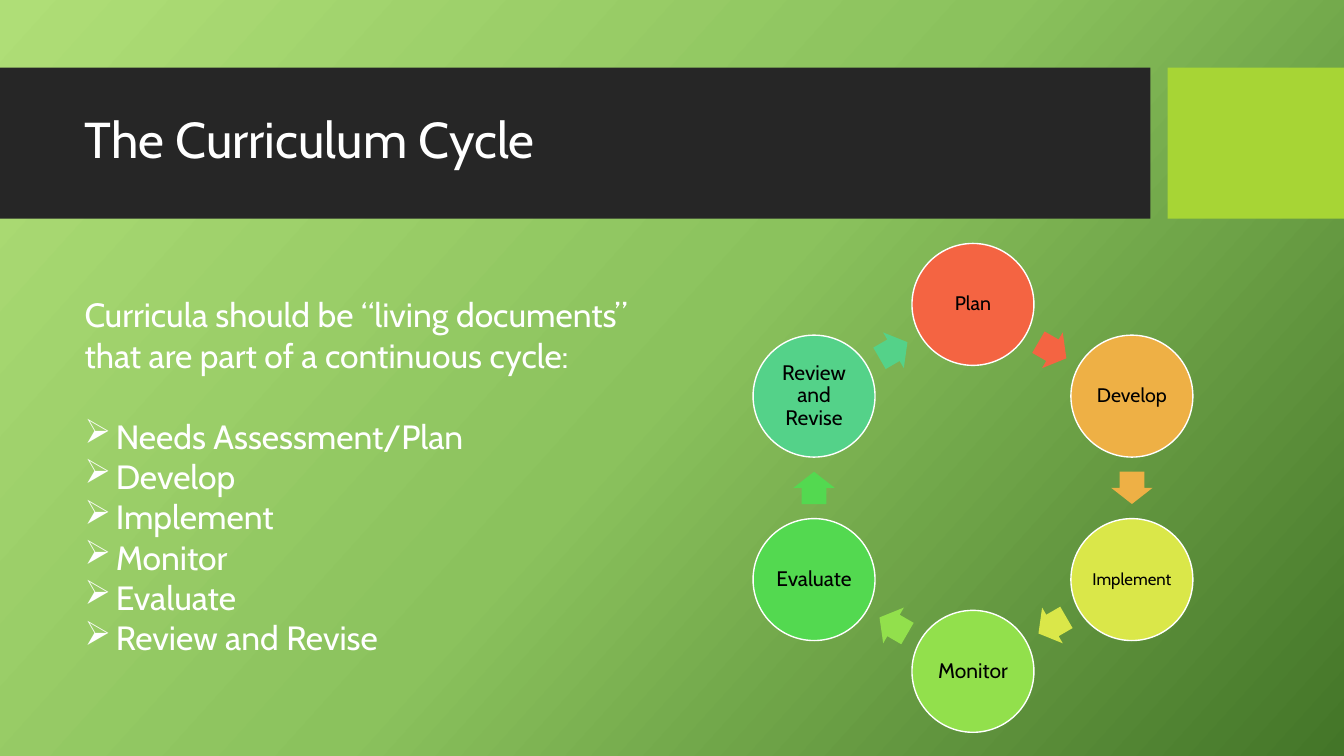
import copy
import math

import lxml.etree
import pptx
import pptx.dml.color
import pptx.enum.shapes
import pptx.enum.text
import pptx.oxml.ns
import pptx.util

Inches = pptx.util.Inches
Pt = pptx.util.Pt
SHAPE = pptx.enum.shapes.MSO_SHAPE
ALIGN = pptx.enum.text.PP_ALIGN
MIDDLE = pptx.enum.text.MSO_ANCHOR.MIDDLE

COLORS = {
    "white": "FFFFFF", "black": "000000",
    "band": "262626", "accent": "A7D535",
    "back_light": "AFDE77", "back_mid": "8BC25D", "back_dark": "437528",
    "plan": "F46442", "develop": "EEB045", "implement": "DAE749",
    "monitor": "92E04C", "evaluate": "53D950", "review": "54D289",
}

INTRO = ["Curricula should be “living documents”",
         "that are part of a continuous cycle:"]
STEPS = ["Needs Assessment/Plan", "Develop", "Implement",
         "Monitor", "Evaluate", "Review and Revise"]
# Label, colour, text size; clockwise from the top
STAGES = [("Plan", "plan", 14), ("Develop", "develop", 14),
          ("Implement", "implement", 12), ("Monitor", "monitor", 15),
          ("Evaluate", "evaluate", 15), ("Review and Revise", "review", 15)]


class CycleSlide:
    font = "Cabin"

    def __init__(self, deck):
        self.slide = deck.slides.add_slide(deck.slide_layouts[5])
        self.shapes = self.slide.shapes

    def color(self, name):
        return pptx.dml.color.RGBColor.from_string(COLORS[name])

    def background(self, names, angle):
        fill = self.slide.background.fill
        fill.gradient()
        fill.gradient_angle = 360 - angle
        stop_list = self.slide.element.xpath(".//a:gsLst")[0]
        stop_list.append(copy.deepcopy(stop_list[-1]))
        for i, (stop, name) in enumerate(zip(fill.gradient_stops, names)):
            stop.position = i / (len(names) - 1)
            stop.color.rgb = self.color(name)

    def style(self, paragraph, size, color):
        for run in paragraph.runs:
            run.font.name = self.font
            run.font.size = Pt(size)
            run.font.color.rgb = self.color(color)

    def shape(self, kind, left, top, width, height, fill):
        shape = self.shapes.add_shape(kind, Inches(left), Inches(top),
                                      Inches(width), Inches(height))
        shape.shadow.inherit = False
        shape.fill.solid()
        shape.fill.fore_color.rgb = self.color(fill)
        shape.line.fill.background()
        return shape

    def band(self, left, width, fill):
        band = self.shape(SHAPE.RECTANGLE, left, 0.67, width, 1.5, fill)
        self.shapes.title.element.addprevious(band.element)

    def title(self, text):
        title = self.shapes.title
        title.left, title.top = Inches(0.74), Inches(0.82)
        title.width, title.height = Inches(10.51), Inches(1.18)
        title.text_frame.text = text
        title.text_frame.vertical_anchor = MIDDLE
        heading = title.text_frame.paragraphs[0]
        heading.alignment = ALIGN.LEFT
        heading.line_spacing = 0.9
        self.style(heading, 36, "white")

    def bullet(self, paragraph, indent):
        props = paragraph._p.get_or_add_pPr()
        props.set("marL", str(Inches(indent)))
        props.set("indent", str(-Inches(indent)))
        mark = lxml.etree.SubElement(props, pptx.oxml.ns.qn("a:buChar"))
        mark.set("char", "➢")

    def body(self, intro, steps):
        box = self.shapes.add_textbox(Inches(0.74), Inches(2.87),
                                      Inches(6.67), Inches(3.74))
        frame = box.text_frame
        frame.word_wrap = True
        frame.text = "\n".join(intro + steps)
        first_step = len(intro)
        for paragraph in frame.paragraphs[first_step:]:
            self.bullet(paragraph, 0.31)
        frame.paragraphs[first_step].space_before = Pt(29)
        for paragraph in frame.paragraphs:
            self.style(paragraph, 24, "white")

    def stage(self, x, y, diameter, label, fill, size):
        circle = self.shape(SHAPE.OVAL, x - diameter / 2, y - diameter / 2,
                            diameter, diameter, fill)
        circle.line.color.rgb = self.color("white")
        circle.line.width = Pt(1)
        frame = circle.text_frame
        frame.word_wrap = True
        frame.vertical_anchor = MIDDLE
        frame.margin_left = frame.margin_right = Inches(0.02)
        frame.margin_top = frame.margin_bottom = Inches(0.02)
        frame.text = label
        caption = frame.paragraphs[0]
        caption.alignment = ALIGN.CENTER
        caption.line_spacing = 0.9
        self.style(caption, size, "black")

    def arrow(self, x, y, rotation, fill):
        width, height = 0.32, 0.41
        arrow = self.shape(SHAPE.RIGHT_ARROW, x - width / 2, y - height / 2,
                           width, height, fill)
        arrow.adjustments[0] = 0.6
        arrow.adjustments[1] = 0.5
        arrow.rotation = rotation

    def cycle(self, stages, center_x, center_y, radius):
        step = 360 / len(stages)
        arrow_radius = radius * math.cos(math.radians(step / 2))

        def spot(degrees, distance):
            angle = math.radians(degrees)
            return (center_x + distance * math.sin(angle),
                    center_y - distance * math.cos(angle))

        for i, (label, fill, size) in enumerate(stages):
            self.stage(*spot(i * step, radius), 1.21, label, fill, size)
            halfway = (i + 0.5) * step
            self.arrow(*spot(halfway, arrow_radius), halfway, fill)


def main():
    deck = pptx.Presentation()
    deck.slide_width, deck.slide_height = Inches(13.33), Inches(7.5)
    page = CycleSlide(deck)

    # Background and title band
    page.background(["back_light", "back_mid", "back_dark"], 42)
    page.band(0, 11.41, "band")
    page.band(11.58, 1.75, "accent")
    page.title("The Curriculum Cycle")

    # Text on the left, cycle on the right
    page.body(INTRO, STEPS)
    page.cycle(STAGES, 9.65, 4.84, 1.82)

    deck.save("out.pptx")


if __name__ == "__main__":
    main()
